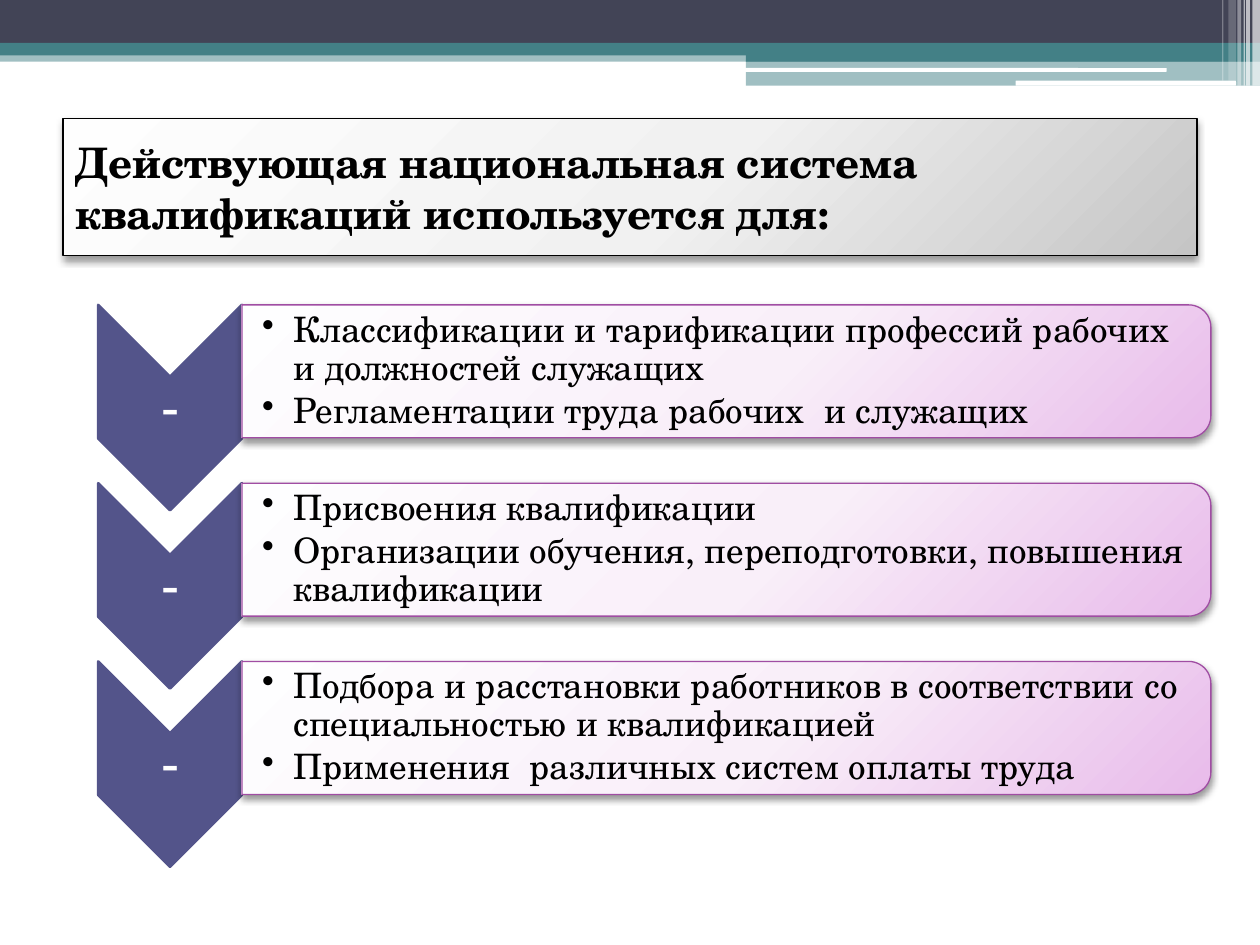
from math import cos, pi, sin

from pptx import Presentation
from pptx.dml.color import RGBColor
from pptx.enum.shapes import MSO_SHAPE
from pptx.enum.text import MSO_ANCHOR, PP_ALIGN
from pptx.oxml import parse_xml
from pptx.oxml.ns import nsdecls
from pptx.util import Emu, Inches, Pt

RECT, ROUND = MSO_SHAPE.RECTANGLE, MSO_SHAPE.ROUNDED_RECTANGLE
LEFT, CENTER = PP_ALIGN.LEFT, PP_ALIGN.CENTER
MIDDLE = MSO_ANCHOR.MIDDLE

BLACK = RGBColor(0x00, 0x00, 0x00)
WHITE = RGBColor(0xFF, 0xFF, 0xFF)
SLATE = RGBColor(0x42, 0x44, 0x56)
TEAL = RGBColor(0x43, 0x80, 0x86)
INDIGO = RGBColor(0x53, 0x54, 0x8A)
PURPLE = RGBColor(0xA0, 0x4D, 0xA3)
GRAY_FADE = (
    (0, RGBColor(0xFE, 0xFE, 0xFE)),
    (55, RGBColor(0xF1, 0xF1, 0xF1)),
    (100, RGBColor(0xC5, 0xC5, 0xC5)),
)
PINK_FADE = (
    (0, RGBColor(0xFE, 0xFE, 0xFF)),
    (55, RGBColor(0xF9, 0xEF, 0xF9)),
    (100, RGBColor(0xE8, 0xBB, 0xEA)),
)

FONT = "TeX Gyre Schola"
COLUMNS, ROWS = 100, 75
CELL = Inches(0.1)

BANDS = [
    (RECT, 0, 4, 100, 0.9, TEAL, 50),
    (RECT, 0, 0, 100, 3.4, SLATE, 100),
    (RECT, 0, 3.4, 100, 1, TEAL, 100),
    (RECT, 59.2, 3.9, 40.8, 1, TEAL, 100),
    (RECT, 59.2, 4.8, 40.8, 2, TEAL, 50),
    (ROUND, 59.1, 5.4, 33.5, 0.3, WHITE, 100),
    (ROUND, 80.6, 6.4, 17.5, 0.4, WHITE, 100),
]
STRIPES = [
    (99.4, 0.6, 6.8, 65),
    (98.9, 0.3, 6.8, 65),
    (98.7, 0.1, 6.8, 60),
    (98.2, 0.3, 6.8, 40),
    (97.5, 0.6, 6.4, 20),
    (97, 0.1, 6.4, 30),
]
TITLE = "Действующая национальная система квалификаций используется для:"
USES = [
    (
        "Классификации и тарификации профессий рабочих  и должностей служащих",
        "Регламентации труда рабочих  и служащих",
    ),
    (
        "Присвоения квалификации",
        "Организации обучения, переподготовки, повышения квалификации",
    ),
    (
        "Подбора и расстановки работников в соответствии со специальностью и квалификацией",
        "Применения  различных систем оплаты труда",
    ),
]


def cells(n):
    return Emu(round(n * CELL))


def apply(target, values):
    for name, value in values.items():
        setattr(target, name, value)


class Deck:
    """Holds the style and the current slide, placing elements on a grid of cells."""

    def __init__(self):
        self.prs = Presentation()
        apply(self.prs, {"slide_width": cells(COLUMNS), "slide_height": cells(ROWS)})
        self.s = self.prs.slides.add_slide(self.prs.slide_layouts[6])

    def block(self, kind, x, y, w, h, color, opacity=100):
        sp = self.s.shapes.add_shape(kind, *map(cells, (x, y, w, h)))
        self.paint(sp, color)
        if opacity < 100:
            clr = sp.fill._xPr.solidFill[0]
            clr.append(parse_xml(f'<a:alpha {nsdecls("a")} val="{opacity * 1000}"/>'))
        return sp

    def outline(self, points):
        first, *rest = [tuple(map(cells, point)) for point in points]
        builder = self.s.shapes.build_freeform(*first)
        builder.add_line_segments(rest, close=True)
        return builder.convert_to_shape()

    def paint(self, sp, color, line=None, width=0.75):
        sp.shadow.inherit = False
        sp.fill.solid()
        sp.fill.fore_color.rgb = color
        if line is None:
            sp.line.fill.background()
        else:
            sp.line.color.rgb = line
            sp.line.width = Pt(width)

    def fade(self, sp, stops, line):
        self.paint(sp, stops[0][1], line)
        spPr = sp._element.spPr
        gs = "".join(
            f'<a:gs pos="{pos * 1000}"><a:srgbClr val="{color}"/></a:gs>' for pos, color in stops
        )
        grad = parse_xml(
            f'<a:gradFill {nsdecls("a")} rotWithShape="1"><a:gsLst>{gs}</a:gsLst>'
            '<a:path path="circle"><a:fillToRect l="-40000" t="-90000" r="140000" b="190000"/>'
            "</a:path></a:gradFill>"
        )
        spPr.replace(spPr.solidFill, grad)
        spPr.effectLst.append(parse_xml(
            f'<a:outerShdw {nsdecls("a")} blurRad="{Pt(4.1)}" dist="{Pt(2)}" dir="5400000"'
            ' rotWithShape="0"><a:srgbClr val="000000"><a:alpha val="40000"/></a:srgbClr>'
            "</a:outerShdw>"
        ))

    def text(self, sp, lines, size, color, margins, bold=False, bullet=False, **layout):
        tf = sp.text_frame
        sides = ("margin_left", "margin_top", "margin_right", "margin_bottom")
        apply(tf, {"word_wrap": True, "vertical_anchor": MIDDLE})
        apply(tf, dict(zip(sides, map(cells, margins))))
        for i, line in enumerate(lines):
            p = tf.paragraphs[0] if i == 0 else tf.add_paragraph()
            apply(p, {"alignment": LEFT, **layout})
            r = p.add_run()
            apply(r, {"text": line})
            apply(r.font, {"name": FONT, "size": Pt(size), "bold": bold})
            r.font.color.rgb = color
            if bullet:
                pPr = p._p.get_or_add_pPr()
                pPr.set("marL", str(cells(2.5)))
                pPr.set("indent", str(cells(-2.5)))
                pPr.append(parse_xml(f'<a:buChar {nsdecls("a")} char="•"/>'))

    def title(self, x, y, w, h, text):
        sp = self.block(RECT, x, y, w, h, WHITE)
        self.fade(sp, GRAY_FADE, BLACK)
        self.text(sp, [text], 24, BLACK, (1, 0.5, 1, 0.5), bold=True)

    def chevron(self, x, y, w, h, mark):
        mid, tip = x + w / 2, w / 2
        sp = self.outline([
            (x + w, y), (x + w, y + h - tip), (mid, y + h),
            (x, y + h - tip), (x, y), (mid, y + tip),
        ])
        self.paint(sp, INDIGO, INDIGO, 1.5)
        self.text(sp, [mark], 31, WHITE, (0.2, 5.9, 0.2, 5.9), alignment=CENTER, line_spacing=0.9)

    def panel(self, x, y, w, h, lines, radius=1.76, steps=12):
        right, bottom = x + w - radius, y + h - radius
        turns = [pi / 2 * i / steps for i in range(steps + 1)]
        upper = [(right + radius * sin(t), y + radius - radius * cos(t)) for t in turns]
        lower = [(right + radius * cos(t), bottom + radius * sin(t)) for t in turns]
        sp = self.outline([(x, y), *upper, *lower, (x, y + h)])
        self.fade(sp, PINK_FADE, PURPLE)
        self.text(sp, lines, 20, BLACK, (1.6, 0.7, 0.7, 0.7), bullet=True,
                  line_spacing=0.9, space_after=Pt(3))


def main():
    deck = Deck()
    for band in BANDS:
        deck.block(*band)
    for x, w, h, opacity in STRIPES:
        deck.block(RECT, x, 0, w, h, WHITE, opacity)
    deck.title(5, 9.4, 90, 10.9, TITLE)
    for i, lines in enumerate(USES):
        y = 24.2 + 14.15 * i
        deck.chevron(7.8, y, 11.4, 16.3, "-")
        deck.panel(19.2, y, 76.9, 10.55, lines)
    deck.prs.save("out.pptx")


if __name__ == "__main__":
    main()
